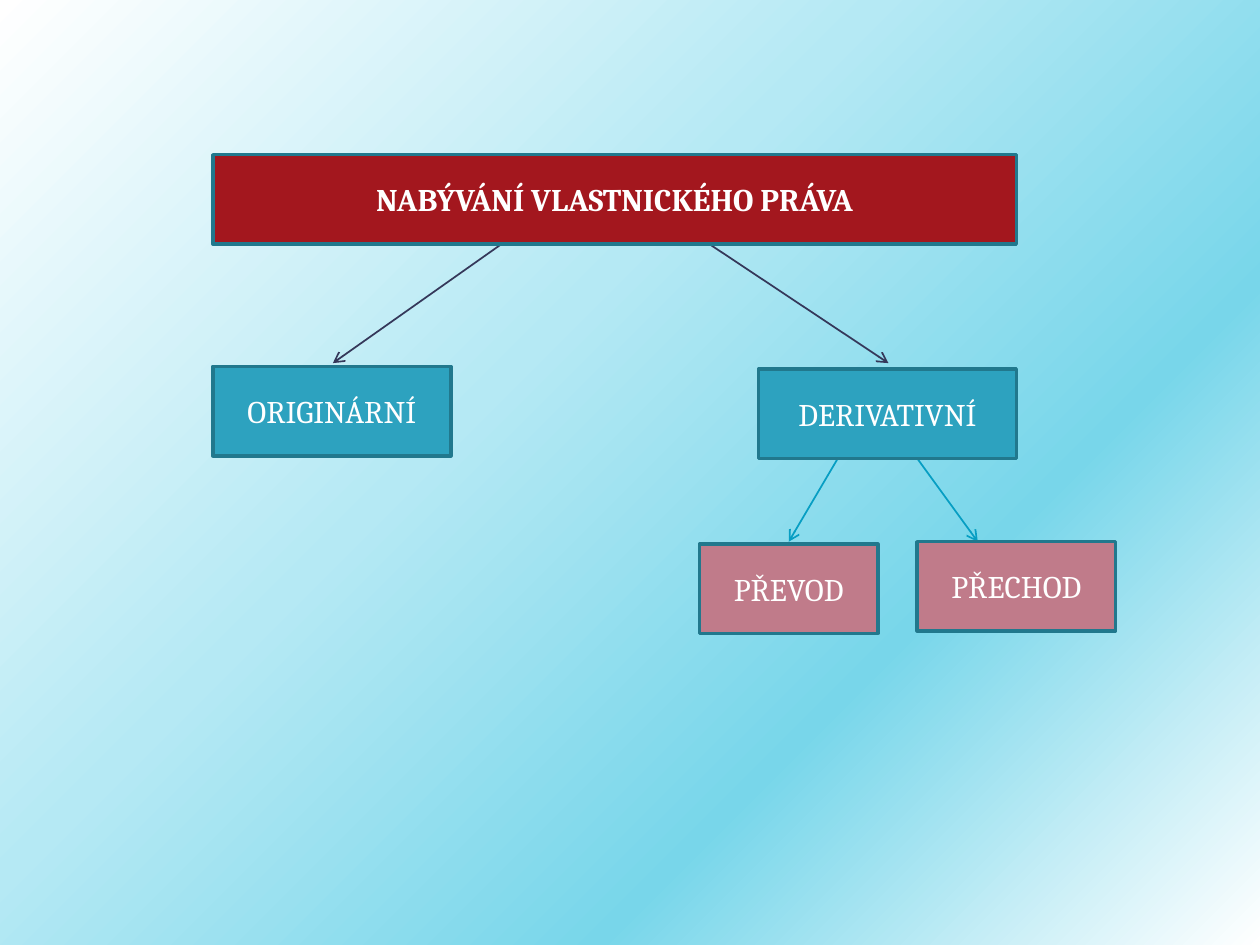
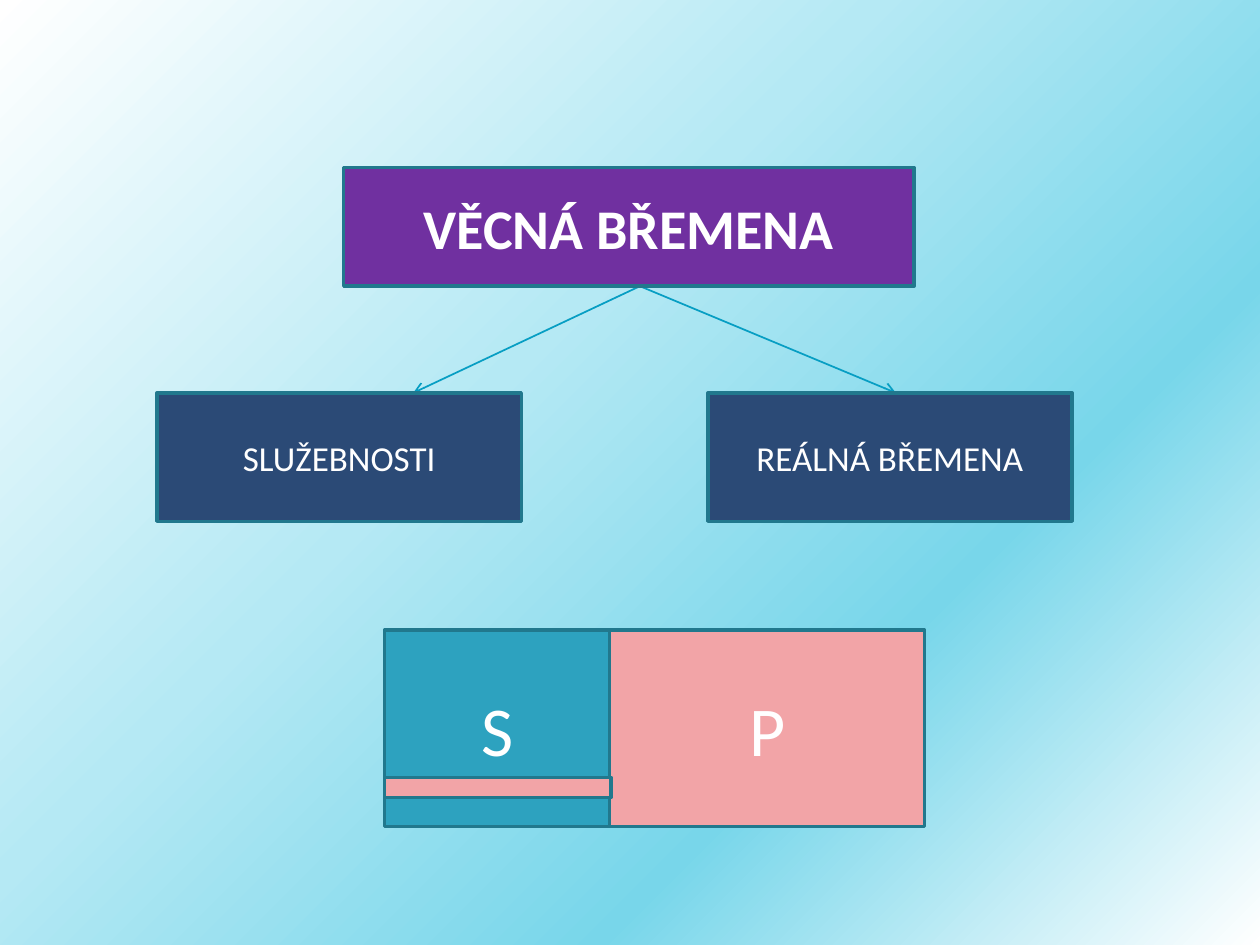
from lxml import etree
from pptx import Presentation
from pptx.dml.color import RGBColor
from pptx.enum.shapes import MSO_CONNECTOR, MSO_SHAPE
from pptx.enum.text import MSO_ANCHOR, PP_ALIGN
from pptx.oxml.ns import qn
from pptx.util import Cm, Pt

RECT = MSO_SHAPE.RECTANGLE
STRAIGHT = MSO_CONNECTOR.STRAIGHT
MIDDLE = MSO_ANCHOR.MIDDLE
CENTER = PP_ALIGN.CENTER

WHITE = RGBColor(0xFF, 0xFF, 0xFF)
PALE = RGBColor(0xB5, 0xE9, 0xF4)
SKY = RGBColor(0x78, 0xD6, 0xEA)
EDGE = RGBColor(0x21, 0x78, 0x8D)
TEAL = RGBColor(0x2D, 0xA2, 0xBF)
CYAN = RGBColor(0x07, 0x9E, 0xC3)
RED = RGBColor(0xA3, 0x17, 0x1E)
ROSE = RGBColor(0xC0, 0x7B, 0x8A)
PINK = RGBColor(0xF2, 0xA4, 0xA7)
INK = RGBColor(0x35, 0x38, 0x5A)
NAVY = RGBColor(0x2B, 0x4A, 0x76)
PURPLE = RGBColor(0x70, 0x30, 0xA0)

STOPS = [(0, WHITE), (40, PALE), (70, SKY), (100, WHITE)]

# text, left, top, width, height, fill, size, bold
# colour, start y, end y, (start x, end x) pairs
SLIDES = [
    {
        "font": "Cambria",
        "boxes": [
            ("NABÝVÁNÍ VLASTNICKÉHO PRÁVA", 4.29, 3.12, 16.2, 1.8, RED, 18, True),
            ("ORIGINÁRNÍ", 4.29, 7.39, 4.8, 1.8, TEAL, 18, False),
            ("DERIVATIVNÍ", 15.29, 7.44, 5.2, 1.8, TEAL, 18, False),
            ("PŘEVOD", 14.1, 10.97, 3.6, 1.8, ROSE, 18, False),
            ("PŘECHOD", 18.49, 10.92, 4, 1.8, ROSE, 18, False),
        ],
        "forks": [
            (INK, 4.92, 7.32, [(10.11, 6.71), (14.3, 17.91)]),
            (CYAN, 9.24, 10.92, [(16.89, 15.9), (18.49, 19.71)]),
        ],
    },
    {
        "font": "Calibri",
        "boxes": [
            ("SLUŽEBNOSTI", 3.17, 7.92, 7.34, 2.59, NAVY, 20, False),
            ("REÁLNÁ BŘEMENA", 14.27, 7.92, 7.34, 2.59, NAVY, 20, False),
            ("VĚCNÁ BŘEMENA", 6.93, 3.38, 11.5, 2.39, PURPLE, 32, True),
            ("S", 7.75, 12.7, 4.57, 3.96, TEAL, 40, False),
            ("P", 12.29, 12.7, 6.35, 3.96, PINK, 40, False),
            ("", 7.75, 15.67, 4.57, 0.41, PINK, 18, False),
        ],
        "forks": [(CYAN, 5.77, 7.92, [(12.9, 8.33), (12.9, 18.06)])],
    },
]


def paint(slide):
    fill = slide.background.fill
    fill.gradient()
    fill.gradient_angle = 315
    stops = next(slide.element.iter(qn("a:gsLst")))
    for stop in list(stops):
        stops.remove(stop)
    for pos, tint in STOPS:
        stop = etree.SubElement(stops, qn("a:gs"), pos=str(pos * 1000))
        etree.SubElement(stop, qn("a:srgbClr"), val=str(tint))


def add_fork(slide, tint, start, end, arms):
    for left, right in arms:
        arm = slide.shapes.add_connector(
            STRAIGHT, Cm(left), Cm(start), Cm(right), Cm(end))
        arm.line.color.rgb = tint
        arm.line.width = Pt(1)
        etree.SubElement(arm.line._get_or_add_ln(), qn("a:tailEnd"), type="arrow")
        etree.SubElement(arm._element.spPr, qn("a:effectLst"))


def add_box(slide, font, text, left, top, width, height, tint, size, bold):
    box = slide.shapes.add_shape(
        RECT, Cm(left), Cm(top), Cm(width), Cm(height))
    box.shadow.inherit = False
    box.fill.solid()
    box.fill.fore_color.rgb = tint
    box.line.color.rgb = EDGE
    box.line.width = Pt(2)
    if not text:
        return
    frame = box.text_frame
    frame.text = text
    frame.vertical_anchor = MIDDLE
    para = frame.paragraphs[0]
    para.alignment = CENTER
    for run in para.runs:
        run.font.name = font
        run.font.size = Pt(size)
        run.font.bold = bold
        run.font.color.rgb = WHITE


def main():
    deck = Presentation()
    deck.slide_width = Cm(25.4)
    deck.slide_height = Cm(19.05)
    for page in SLIDES:
        slide = deck.slides.add_slide(deck.slide_layouts[6])
        paint(slide)
        for fork in page["forks"]:
            add_fork(slide, *fork)
        for box in page["boxes"]:
            add_box(slide, page["font"], *box)
    deck.save("out.pptx")


if __name__ == "__main__":
    main()
